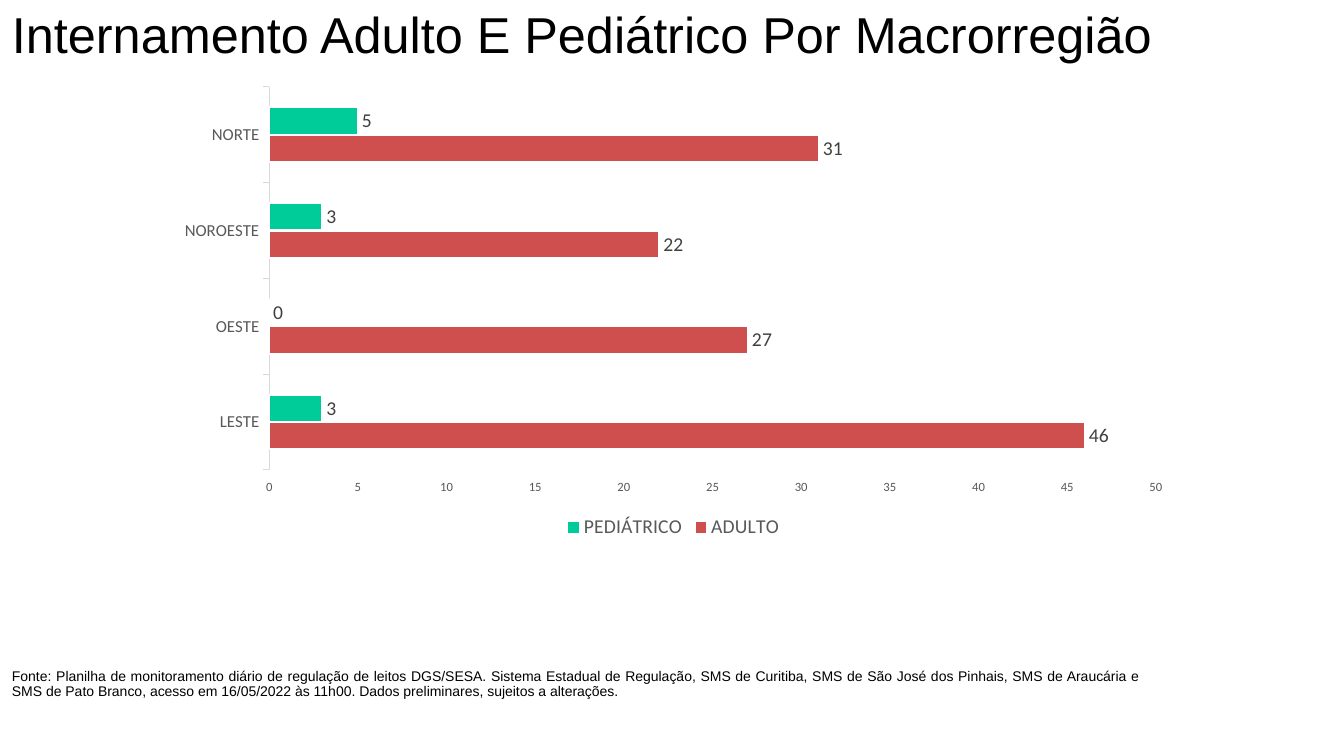
"""Build the slide on adult and paediatric admissions by macro-region."""
from pptx import Presentation
from pptx.chart.data import CategoryChartData
from pptx.dml.color import RGBColor
from pptx.enum.chart import XL_CHART_TYPE, XL_LABEL_POSITION, XL_LEGEND_POSITION, XL_TICK_MARK
from pptx.enum.text import MSO_ANCHOR, PP_ALIGN
from pptx.util import Inches, Pt

BAR = XL_CHART_TYPE.BAR_CLUSTERED
OUTSIDE_END = XL_LABEL_POSITION.OUTSIDE_END
BOTTOM_LEGEND = XL_LEGEND_POSITION.BOTTOM
TICK_OUT = XL_TICK_MARK.OUTSIDE
JUSTIFY = PP_ALIGN.JUSTIFY
TOP, BOTTOM = MSO_ANCHOR.TOP, MSO_ANCHOR.BOTTOM

BLACK = RGBColor(0x00, 0x00, 0x00)
WHITE = RGBColor(0xFF, 0xFF, 0xFF)
RED = RGBColor(0xCF, 0x4F, 0x4F)
GREEN = RGBColor(0x00, 0xCC, 0x99)
DARK_GREY = RGBColor(0x40, 0x40, 0x40)
GREY = RGBColor(0x59, 0x59, 0x59)
LIGHT_GREY = RGBColor(0xD9, 0xD9, 0xD9)

WIDTH, HEIGHT = 13.33, 7.5
TITLE = "Internamento Adulto E Pediátrico Por Macrorregião"
SOURCE = (
    "Fonte: Planilha de monitoramento diário de regulação de leitos DGS/SESA. "
    "Sistema Estadual de Regulação, SMS de Curitiba, SMS de São José dos Pinhais, "
    "SMS de Araucária e SMS de Pato Branco, acesso em 16/05/2022 às 11h00. "
    "Dados preliminares, sujeitos a alterações."
)
REGIONS = ["LESTE", "OESTE", "NOROESTE", "NORTE"]
SERIES = [("ADULTO", [46, 27, 22, 31], RED), ("PEDIÁTRICO", [3, 0, 3, 5], GREEN)]


def area(left, top, width, height):
    """Turn percentages of the slide into a position and size."""
    return (Inches(WIDTH * left / 100), Inches(HEIGHT * top / 100),
            Inches(WIDTH * width / 100), Inches(HEIGHT * height / 100))


def set_font(font, name, size, color):
    """Set the face, size and colour of a font."""
    font.name = name
    font.size = Pt(size)
    font.color.rgb = color


def add_text(s, text, size, anchor, box):
    """Add a justified paragraph in a wrapping text box."""
    tf = s.shapes.add_textbox(*box).text_frame
    tf.word_wrap = True
    tf.vertical_anchor = anchor
    p = tf.paragraphs[0]
    p.alignment = JUSTIFY
    p.line_spacing = 0.9
    r = p.add_run()
    r.text = text
    set_font(r.font, "Arial", size, BLACK)


def style_axis(axis, size):
    """Set the ticks and labels of an axis and drop its gridlines."""
    axis.has_major_gridlines = False
    axis.major_tick_mark = TICK_OUT
    set_font(axis.tick_labels.font, "Calibri", size, GREY)


def style_series(series, color):
    """Colour the bars of a series and label them with their values."""
    series.format.fill.solid()
    series.format.fill.fore_color.rgb = color
    series.format.line.color.rgb = WHITE
    series.format.line.width = Pt(1.5)
    series.invert_if_negative = False
    labels = series.data_labels
    labels.show_value = True
    labels.position = OUTSIDE_END
    labels.number_format = "#,##0"
    labels.number_format_is_linked = False
    set_font(labels.font, "Calibri", 14, DARK_GREY)


def add_bar_chart(s, box):
    """Add the clustered bars of admissions by macro-region."""
    data = CategoryChartData(number_format="#,##0")
    data.categories = REGIONS
    for name, values, _ in SERIES:
        data.add_series(name, values)
    chart = s.shapes.add_chart(BAR, *box, data).chart
    chart.has_title = False
    set_font(chart.font, "Calibri", 10, BLACK)

    style_axis(chart.category_axis, 12)
    chart.category_axis.format.line.color.rgb = LIGHT_GREY
    chart.category_axis.format.line.width = Pt(0.75)
    style_axis(chart.value_axis, 9)
    chart.value_axis.format.line.fill.background()

    chart.has_legend = True
    chart.legend.position = BOTTOM_LEGEND
    chart.legend.include_in_layout = False
    set_font(chart.legend.font, "Calibri", 14, GREY)

    plot = chart.plots[0]
    plot.gap_width = 150
    plot.overlap = 0
    plot.vary_by_categories = False
    for series, (_, _, color) in zip(plot.series, SERIES):
        style_series(series, color)


def main():
    """Lay out the title, the source note and the chart, then save."""
    prs = Presentation()
    prs.slide_width, prs.slide_height = Inches(WIDTH), Inches(HEIGHT)
    s = prs.slides.add_slide(prs.slide_layouts[6])
    add_text(s, TITLE, 36, TOP, area(0.15, 0.67, 99.85, 19.2))
    add_text(s, SOURCE, 10, BOTTOM, area(0.15, 82.53, 85.3, 10.67))
    add_bar_chart(s, area(12.23, 10.27, 75.77, 61.6))
    prs.save("out.pptx")


if __name__ == "__main__":
    main()
